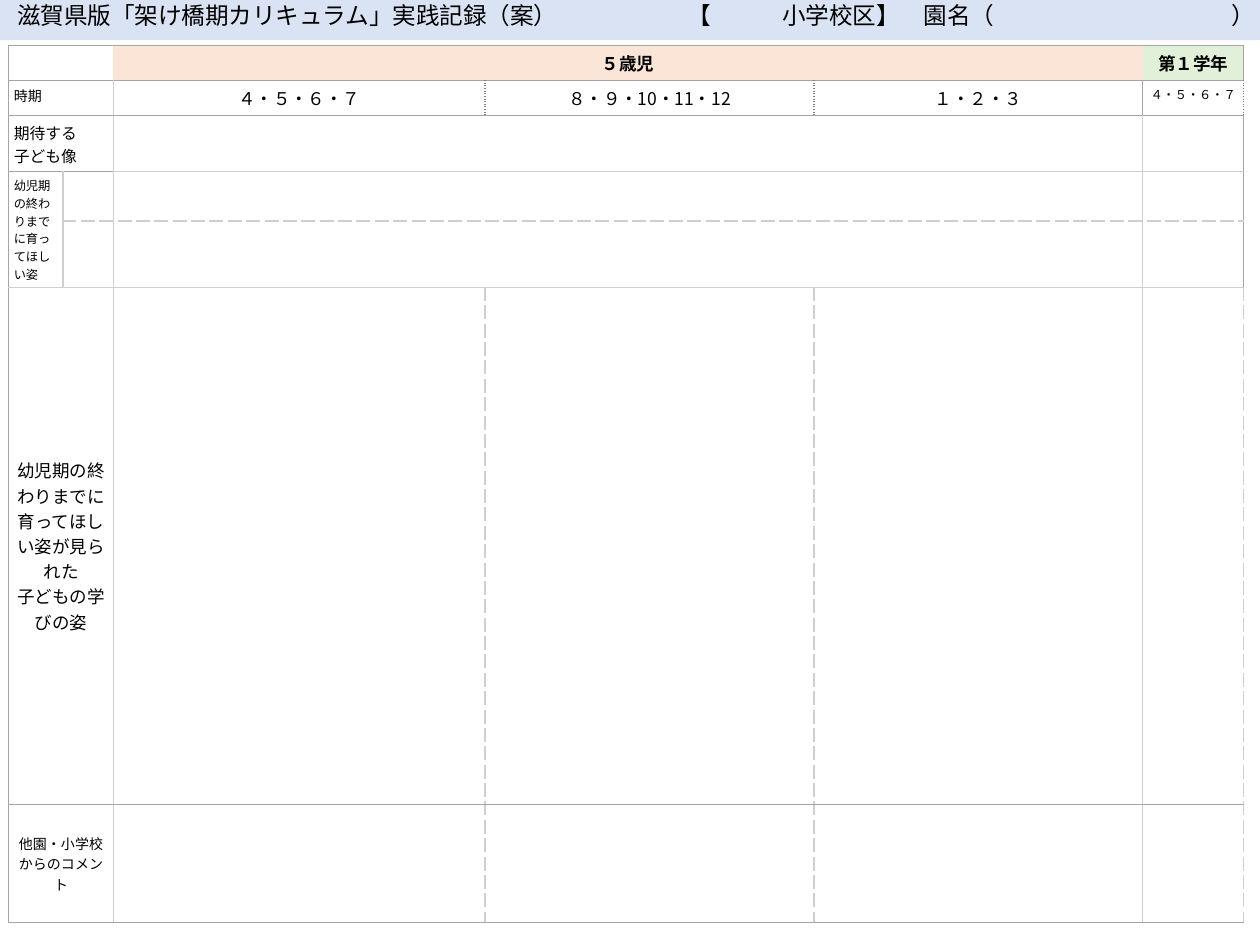
from collections import defaultdict

from lxml.etree import SubElement
from pptx import Presentation
from pptx.dml.color import RGBColor
from pptx.enum.shapes import MSO_SHAPE
from pptx.enum.text import MSO_ANCHOR, MSO_AUTO_SIZE, PP_ALIGN
from pptx.oxml.ns import qn
from pptx.util import Inches, Pt

FONT = "Noto Sans CJK JP"
BLACK = RGBColor(0x00, 0x00, 0x00)
TITLE_BLUE = RGBColor(0xDA, 0xE3, 0xF3)
PEACH = RGBColor(0xFB, 0xE5, 0xD6)
GREEN = RGBColor(0xE2, 0xF0, 0xD9)
GRAY = RGBColor(0xA5, 0xA5, 0xA5)
DARK_GRAY = RGBColor(0x80, 0x80, 0x80)
LIGHT_GRAY = RGBColor(0xD0, 0xCE, 0xCE)

NO_GRID_STYLE = "{2D5ABB26-0587-4C30-8999-92F81FD0307C}"
TITLE_SIZE = 13.5
TITLE_EM = TITLE_SIZE / 72

# Border styles: colour, width in points, dash
FRAME = (GRAY, 0.5, "solid")
THIN = (LIGHT_GRAY, 0.75, "solid")
INNER = (LIGHT_GRAY, 1, "solid")
DASHED = (LIGHT_GRAY, 1, "sysDash")
DOTTED = (DARK_GRAY, 1, "sysDot")

COLUMN_WIDTHS = [0.43, 0.16, 0.24, 2.95, 2.61, 2.61, 0.8]
ROW_HEIGHTS = [0.25, 0.25, 0.36, 0.39, 0.37, 4.1, 0.94]

# Row, column, row span, column span
MERGES = [
    (0, 0, 1, 2), (0, 3, 1, 3), (1, 0, 1, 2), (2, 0, 1, 3),
    (2, 3, 1, 3), (3, 0, 2, 1), (3, 1, 1, 2), (3, 3, 1, 3),
    (4, 1, 1, 2), (4, 3, 1, 3), (5, 0, 1, 3), (6, 0, 1, 3),
]

# Grid line, first and last column, style
HORIZONTAL_LINES = [
    (0, 0, 7, FRAME), (1, 0, 7, FRAME), (2, 0, 7, FRAME),
    (3, 0, 3, FRAME), (3, 3, 7, INNER), (4, 1, 7, DASHED),
    (5, 0, 7, INNER), (6, 0, 7, FRAME), (7, 0, 7, FRAME),
]

# Grid line, first and last row, style
VERTICAL_LINES = [
    (0, 0, 7, FRAME), (1, 3, 5, THIN), (3, 1, 7, THIN),
    (4, 1, 2, DOTTED), (4, 5, 7, DASHED),
    (5, 1, 2, DOTTED), (5, 5, 7, DASHED),
    (6, 1, 2, FRAME), (6, 2, 7, INNER),
    (7, 0, 1, FRAME), (7, 1, 2, DOTTED), (7, 2, 5, FRAME), (7, 5, 7, DASHED),
]

CENTERED = {"align": PP_ALIGN.CENTER}
CELL_TEXTS = {
    (0, 3): ("５歳児", {"size": 10, "bold": True, **CENTERED}),
    (0, 6): ("第１学年", {"size": 10, "bold": True, **CENTERED}),
    (1, 0): ("時期", {"size": 8}),
    (1, 3): ("４・５・６・７", {"size": 10, **CENTERED}),
    (1, 4): ("８・９・10・11・12", {"size": 10, **CENTERED}),
    (1, 5): ("１・２・３", {"size": 10, **CENTERED}),
    (1, 6): ("４・５・６・７", {"size": 7, **CENTERED}),
    (2, 0): ("期待する\n子ども像", {"size": 9}),
    (3, 0): ("幼児期の終わりまでに育ってほしい姿", {"size": 7}),
    (5, 0): ("幼児期の終わりまでに育ってほしい姿が見られた\n子どもの学びの姿",
             {"size": 10, **CENTERED}),
    (6, 0): ("他園・小学校からのコメント", {"size": 8, **CENTERED}),
}
CELL_FILLS = {(0, 3): PEACH, (0, 6): GREEN}
VERTICAL_CELLS = [(3, 0), (5, 0), (6, 0)]
MIDDLE_CELLS = [(5, 0), (6, 0)]


def write_text(frame, text, size=10, bold=False, align=PP_ALIGN.LEFT, tab_stops=()):
    for index, line in enumerate(text.split("\n")):
        paragraph = frame.add_paragraph() if index else frame.paragraphs[0]
        paragraph.alignment = align
        if tab_stops:
            tab_list = SubElement(paragraph._p.get_or_add_pPr(), qn("a:tabLst"))
            for stop in tab_stops:
                SubElement(tab_list, qn("a:tab"), pos=str(Inches(stop)), algn="l")
        run = paragraph.add_run()
        run.text = line
        run.font.size = Pt(size)
        run.font.bold = bold
        run.font.color.rgb = BLACK
        run.font.name = FONT
        SubElement(run.font._element, qn("a:ea"), typeface=FONT)


def add_title_text(group, left, width, text, **text_format):
    box = group.shapes.add_textbox(Inches(left), Inches(-0.04), Inches(width), Inches(0.33))
    box.text_frame.word_wrap = True
    box.text_frame.auto_size = MSO_AUTO_SIZE.SHAPE_TO_FIT_TEXT
    write_text(box.text_frame, text, size=TITLE_SIZE, **text_format)


def add_title_bar(slide):
    group = slide.shapes.add_group_shape()
    bar = group.shapes.add_shape(
        MSO_SHAPE.ROUNDED_RECTANGLE, Inches(0), Inches(-0.04), Inches(10), Inches(0.36))
    bar.adjustments[0] = 0.03
    bar.shadow.inherit = False
    bar.fill.solid()
    bar.fill.fore_color.rgb = TITLE_BLUE
    bar.line.fill.background()
    add_title_text(group, 0.04, 5.28, "滋賀県版「架け橋期カリキュラム」実践記録（案）")
    add_title_text(group, 5.36, 4.76, "【\t小学校区】\t園名（\t）",
                   tab_stops=[TITLE_EM * count for count in (4, 10, 23)])


def collect_borders():
    """Map each cell, and the first cell of its merged area, to its border styles."""
    origins = {
        (row + down, column + across): (row, column)
        for row, column, rows, columns in MERGES
        for down in range(rows) for across in range(columns)
    }
    borders = defaultdict(dict)

    def mark(row, column, side, style):
        if 0 <= row < len(ROW_HEIGHTS) and 0 <= column < len(COLUMN_WIDTHS):
            for position in ((row, column), origins.get((row, column), (row, column))):
                borders[position][side] = style

    for line, first, last, style in HORIZONTAL_LINES:
        for column in range(first, last):
            mark(line - 1, column, "B", style)
            mark(line, column, "T", style)
    for line, first, last, style in VERTICAL_LINES:
        for row in range(first, last):
            mark(row, line - 1, "R", style)
            mark(row, line, "L", style)
    return borders


def draw_borders(cell, styles):
    properties = cell._tc.get_or_add_tcPr()
    sides = [side for side in "LRTB" if side in styles]
    for index, side in enumerate(sides):
        color, width, dash = styles[side]
        line = SubElement(properties, qn(f"a:ln{side}"), w=str(Pt(width)))
        fill = SubElement(line, qn("a:solidFill"))
        SubElement(fill, qn("a:srgbClr"), val=str(color))
        SubElement(line, qn("a:prstDash"), val=dash)
        properties.insert(index, line)


def format_cell(cell, position):
    cell.margin_left = cell.margin_right = Inches(0.04)
    cell.margin_top = cell.margin_bottom = Inches(0.04)
    if position in CELL_FILLS:
        cell.fill.solid()
        cell.fill.fore_color.rgb = CELL_FILLS[position]
    else:
        cell.fill.background()
    if position in MIDDLE_CELLS:
        cell.vertical_anchor = MSO_ANCHOR.MIDDLE
    if position in VERTICAL_CELLS:
        cell._tc.get_or_add_tcPr().set("vert", "eaVert")
    if position in CELL_TEXTS:
        text, text_format = CELL_TEXTS[position]
        write_text(cell.text_frame, text, **text_format)
    else:
        cell.text_frame.paragraphs[0]._p.get_or_add_endParaRPr().set("sz", "800")


def add_record_table(slide):
    frame = slide.shapes.add_table(
        len(ROW_HEIGHTS), len(COLUMN_WIDTHS), Inches(0.07), Inches(0.36),
        Inches(sum(COLUMN_WIDTHS)), Inches(sum(ROW_HEIGHTS)))
    table = frame.table
    table.first_row = table.horz_banding = False
    for style in frame._element.iter(qn("a:tableStyleId")):
        style.text = NO_GRID_STYLE
    for column, width in zip(table.columns, COLUMN_WIDTHS):
        column.width = Inches(width)
    for row, height in zip(table.rows, ROW_HEIGHTS):
        row.height = Inches(height)
    for row, column, rows, columns in MERGES:
        table.cell(row, column).merge(table.cell(row + rows - 1, column + columns - 1))
    borders = collect_borders()
    for row in range(len(ROW_HEIGHTS)):
        for column in range(len(COLUMN_WIDTHS)):
            cell = table.cell(row, column)
            format_cell(cell, (row, column))
            draw_borders(cell, borders[row, column])


def main():
    presentation = Presentation()
    presentation.slide_width = Inches(10)
    presentation.slide_height = Inches(7.5)
    slide = presentation.slides.add_slide(presentation.slide_layouts[6])
    add_record_table(slide)
    add_title_bar(slide)
    presentation.save("out.pptx")


if __name__ == "__main__":
    main()
